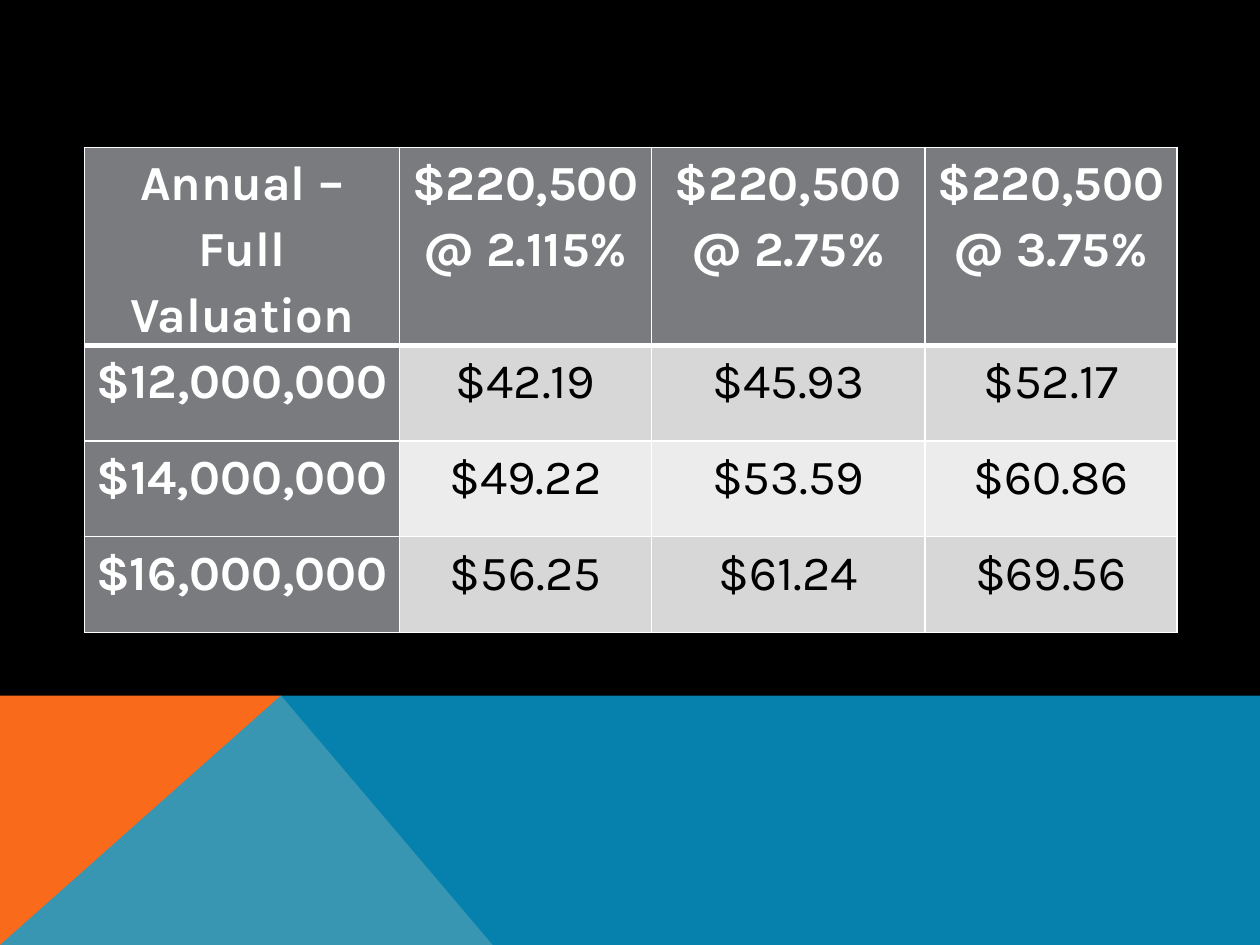
"""Build a slide with a table of annual costs by valuation and rate."""
from lxml.etree import SubElement
from pptx import Presentation
from pptx.dml.color import RGBColor
from pptx.enum.text import PP_ALIGN
from pptx.oxml.ns import qn
from pptx.util import Inches, Pt

HUES = {
    "back": "000000", "orange": "F96A1B", "blue": "08A1D9",
    "head": "797B7E", "odd": "D7D7D8", "even": "ECECEC",
    "light": "FFFFFF", "dark": "000000",
}
ROWS = [
    ["Annual – Full Valuation", "$220,500 @ 2.115%", "$220,500 @ 2.75%", "$220,500 @ 3.75%"],
    ["$12,000,000", "$42.19", "$45.93", "$52.17"],
    ["$14,000,000", "$49.22", "$53.59", "$60.86"],
    ["$16,000,000", "$56.25", "$61.24", "$69.56"],
]
WIDTHS = [2.5, 2, 2.17, 2]
HEIGHTS = [1.56, 0.76, 0.76, 0.76]


def paint(fill, hue):
    fill.solid()
    fill.fore_color.rgb = RGBColor.from_string(HUES[hue])


def edge(cell, side, width):
    line = SubElement(cell._tc.get_or_add_tcPr(), qn(f"a:ln{side}"), w=str(Pt(width)))
    solid = SubElement(line, qn("a:solidFill"))
    SubElement(solid, qn("a:srgbClr"), val=HUES["light"])


deck = Presentation()
deck.slide_width, deck.slide_height = Inches(10), Inches(7.5)
slide = deck.slides.add_slide(deck.slide_layouts[6])
paint(slide.background.fill, "back")

top, peak, base = 5.52, 2.23, 7.5
bands = [
    ("orange", [(0, base), (0, top), (peak, top), (3.91, base)]),
    ("blue", [(0, base), (peak, top), (10, top), (10, base)]),
]
for hue, spots in bands:
    spots = [(Inches(x), Inches(y)) for x, y in spots]
    pen = slide.shapes.build_freeform(*spots[0])
    pen.add_line_segments(spots[1:], close=True)
    band = pen.convert_to_shape()
    band.shadow.inherit = False
    band.line.fill.background()
    paint(band.fill, hue)
    if hue == "blue":
        tint = band.fill._xPr.find(qn("a:solidFill"))[0]
        SubElement(tint, qn("a:alpha"), val="80000")

table = slide.shapes.add_table(
    len(ROWS), len(WIDTHS), Inches(0.67), Inches(1.17),
    Inches(sum(WIDTHS)), Inches(sum(HEIGHTS))).table
for col, width in zip(table.columns, WIDTHS):
    col.width = Inches(width)
for row, height in zip(table.rows, HEIGHTS):
    row.height = Inches(height)

for r, row in enumerate(ROWS):
    for c, text in enumerate(row):
        cell = table.cell(r, c)
        head = r == 0 or c == 0
        cell.margin_left = cell.margin_right = Inches(0.07)
        cell.margin_top = cell.margin_bottom = 0
        for side in "LRTB":
            thick = (r, side) in [(0, "B"), (1, "T")]
            edge(cell, side, 3 if thick else 1)
        paint(cell.fill, "head" if head else "odd" if r % 2 else "even")
        para = cell.text_frame.paragraphs[0]
        para.alignment = PP_ALIGN.CENTER
        para.line_spacing = 1.15
        run = para.add_run()
        run.text = text
        run.font.name = "Karla"
        run.font.size = Pt(28)
        run.font.bold = head
        paint(run.font.fill, "light" if head else "dark")

deck.save("out.pptx")
